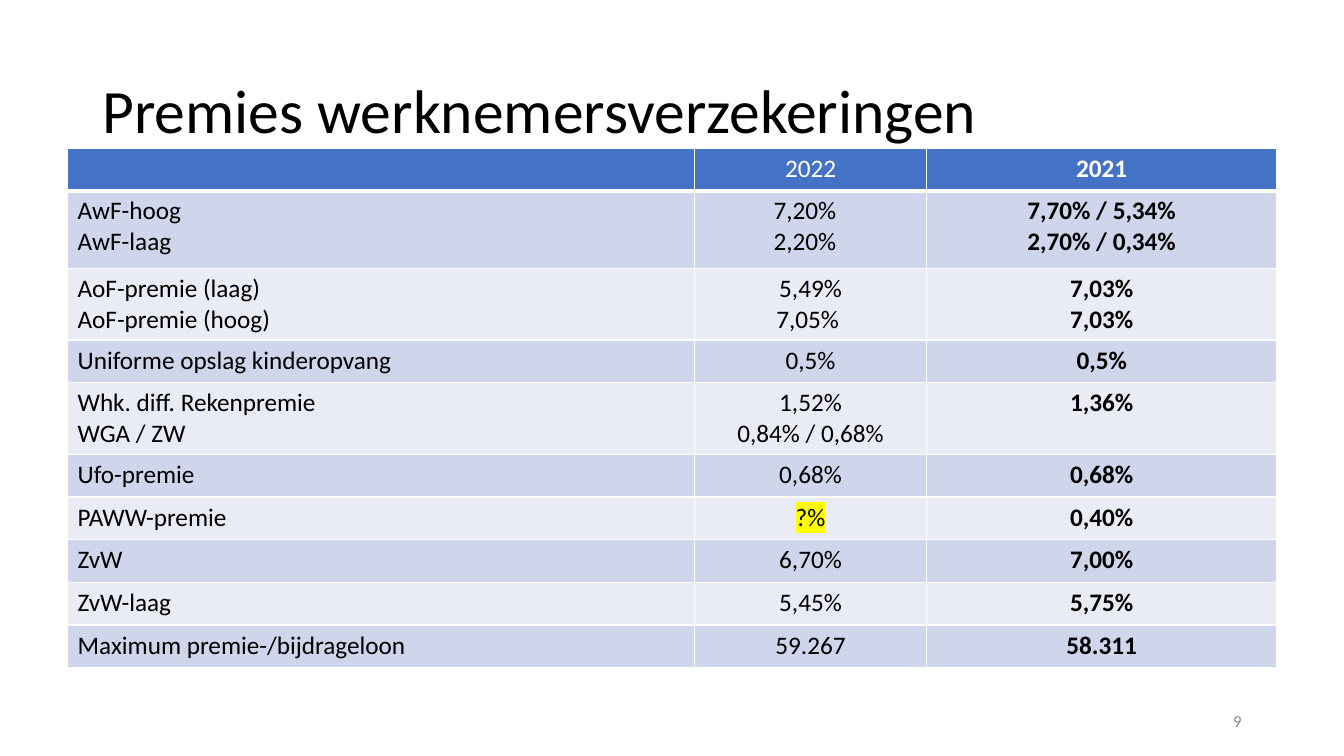
from dataclasses import dataclass

from lxml.etree import SubElement
from pptx import Presentation
from pptx.dml.color import RGBColor
from pptx.enum.text import MSO_ANCHOR, PP_ALIGN
from pptx.oxml import parse_xml
from pptx.oxml.ns import nsdecls, qn
from pptx.util import Pt


@dataclass(frozen=True)
class Theme:
    font: str = "Calibri"
    title_size: float = 44
    body_size: float = 18
    number_size: float = 12
    ink: str = "000000"
    paper: str = "FFFFFF"
    muted: str = "8C8C8C"
    header: str = "4472C4"
    bands: tuple = ("CFD5EA", "E9EBF5")
    marker: str = "FFFF00"


THEME = Theme()

PREMIUMS = [
    ("", "2022", "2021"),
    ("AwF-hoog\nAwF-laag", "7,20%\n2,20%", "7,70% / 5,34%\n2,70% / 0,34%"),
    ("AoF-premie (laag)\nAoF-premie (hoog)", "5,49%\n7,05%", "7,03%\n7,03%"),
    ("Uniforme opslag kinderopvang", "0,5%", "0,5%"),
    ("Whk. diff. Rekenpremie\nWGA / ZW", "1,52%\n0,84% / 0,68%", "1,36%"),
    ("Ufo-premie", "0,68%", "0,68%"),
    ("PAWW-premie", "?%", "0,40%"),
    ("ZvW", "6,70%", "7,00%"),
    ("ZvW-laag", "5,45%", "5,75%"),
    ("Maximum premie-/bijdrageloon", "59.267", "58.311"),
]
COLUMN_WIDTHS = (448, 165.5, 250.5)
SINGLE_ROW, DOUBLE_ROW, AWF_ROW = 30.5, 51, 55.5
RIGHT_INDENTS = {"7,20%": 8, "7,05%": 4}
UNKNOWN = "?%"


def write(frame, text, *, size, color, bold=False, align=PP_ALIGN.LEFT,
          spacing=None, highlight=None):
    frame.word_wrap = True
    for index, line in enumerate(text.split("\n")):
        paragraph = frame.add_paragraph() if index else frame.paragraphs[0]
        paragraph.alignment = align
        paragraph.line_spacing = spacing
        if line in RIGHT_INDENTS:
            indent = Pt(RIGHT_INDENTS[line])
            paragraph._p.get_or_add_pPr().set("marR", str(indent))
        run = paragraph.add_run()
        run.text = line
        font = run.font
        font.name, font.size, font.bold = THEME.font, Pt(size), bold
        font.color.rgb = RGBColor.from_string(color)
        if highlight:
            mark = parse_xml(f'<a:highlight {nsdecls("a")}>'
                             f'<a:srgbClr val="{highlight}"/></a:highlight>')
            run._r.rPr.find(qn("a:latin")).addprevious(mark)


class SlideBuilder:
    def __init__(self, presentation, theme):
        self.theme = theme
        self.slide = presentation.slides.add_slide(presentation.slide_layouts[5])

    def title(self, text, left, top, width, height):
        heading = self.slide.shapes.title
        heading.left, heading.top = Pt(left), Pt(top)
        heading.width, heading.height = Pt(width), Pt(height)
        heading.text_frame.vertical_anchor = MSO_ANCHOR.MIDDLE
        write(heading.text_frame, text, size=self.theme.title_size,
              color=self.theme.ink, spacing=0.9)

    def page_number(self, text, left, top, width, height):
        box = self.slide.shapes.add_textbox(Pt(left), Pt(top), Pt(width), Pt(height))
        box.text_frame.vertical_anchor = MSO_ANCHOR.MIDDLE
        write(box.text_frame, text, size=self.theme.number_size,
              color=self.theme.muted, align=PP_ALIGN.RIGHT)

    def borders(self, cell, bottom):
        properties = cell._tc.get_or_add_tcPr()
        for side, weight in (("L", 1), ("R", 1), ("T", 1), ("B", bottom)):
            line = SubElement(properties, qn(f"a:ln{side}"), w=str(Pt(weight)))
            fill = SubElement(line, qn("a:solidFill"))
            SubElement(fill, qn("a:srgbClr"), val=self.theme.paper)

    def cell(self, cell, text, row, column):
        theme = self.theme
        is_header = row == 0
        self.borders(cell, bottom=3 if is_header else 1)
        cell.fill.solid()
        band = theme.header if is_header else theme.bands[(row - 1) % 2]
        cell.fill.fore_color.rgb = RGBColor.from_string(band)
        if text:
            write(cell.text_frame, text, size=theme.body_size,
                  color=theme.paper if is_header else theme.ink,
                  bold=column == 2,
                  align=PP_ALIGN.CENTER if column else PP_ALIGN.LEFT,
                  highlight=theme.marker if text == UNKNOWN else None)

    def table(self, rows, widths, heights, left, top):
        grid = self.slide.shapes.add_table(
            len(rows), len(widths), Pt(left), Pt(top),
            Pt(sum(widths)), Pt(sum(heights))).table
        for column, width in zip(grid.columns, widths):
            column.width = Pt(width)
        for row, (texts, height) in enumerate(zip(rows, heights)):
            grid.rows[row].height = Pt(height)
            for column, text in enumerate(texts):
                self.cell(grid.cell(row, column), text, row, column)


def main():
    presentation = Presentation()
    presentation.slide_width, presentation.slide_height = Pt(960), Pt(540)
    builder = SlideBuilder(presentation, THEME)
    builder.title("Premies werknemersverzekeringen", 66, 28.75, 828, 104.5)
    heights = [DOUBLE_ROW if "\n" in name else SINGLE_ROW for name, *_ in PREMIUMS]
    heights[1] = AWF_ROW
    builder.table(PREMIUMS, COLUMN_WIDTHS, heights, 48.25, 105.75)
    builder.page_number("9", 678, 500.5, 216, 28.75)
    presentation.save("out.pptx")


if __name__ == "__main__":
    main()
